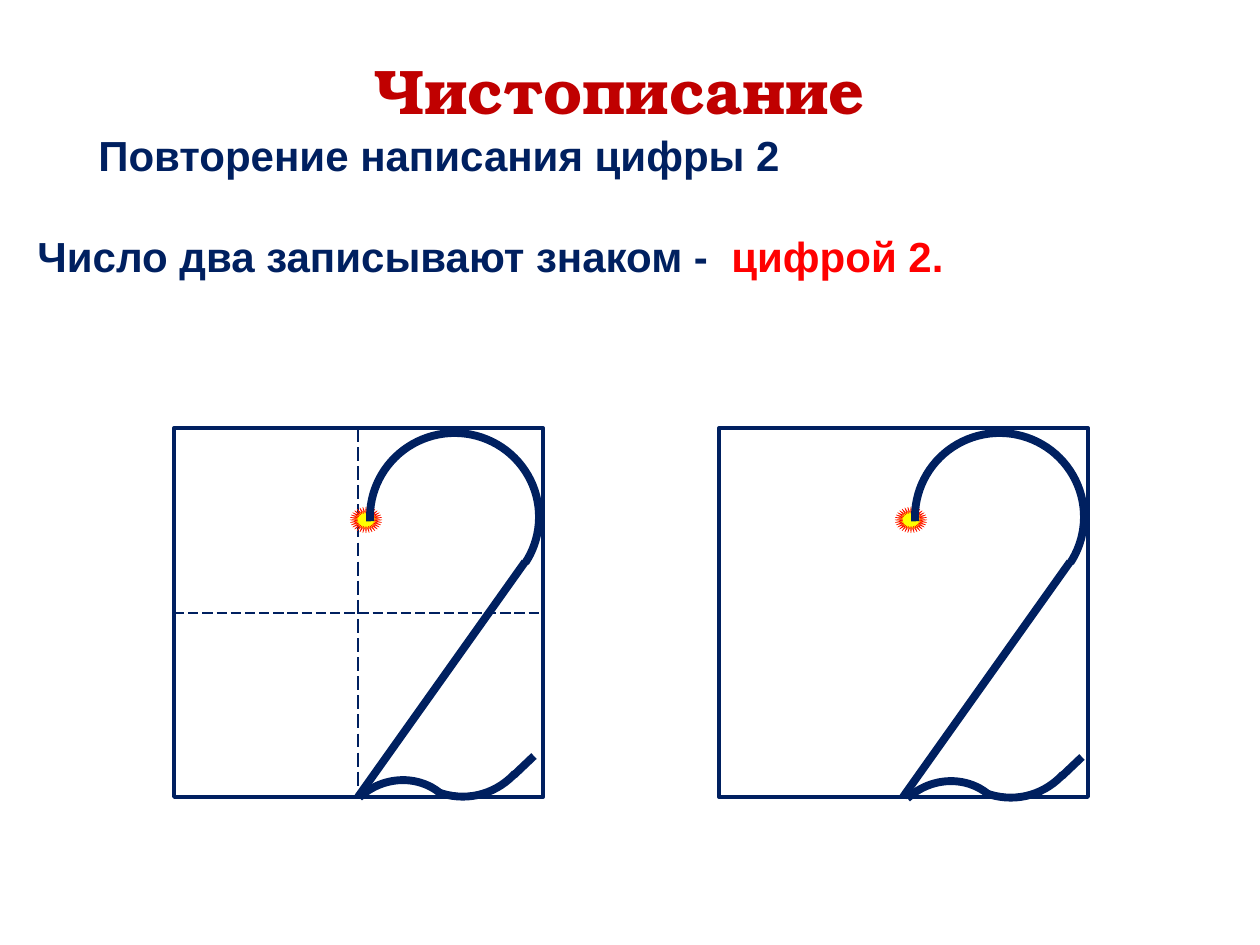
"""Builds a handwriting slide that shows how to write the digit 2."""
from lxml import etree
from pptx import Presentation
from pptx.dml.color import RGBColor
from pptx.enum.dml import MSO_LINE
from pptx.enum.shapes import MSO_CONNECTOR, MSO_SHAPE
from pptx.enum.text import MSO_AUTO_SIZE, PP_ALIGN
from pptx.oxml.ns import qn
from pptx.util import Pt

SCALE = 914400 / 126
RECT, STAR, ARC = MSO_SHAPE.RECTANGLE, MSO_SHAPE.STAR_32_POINT, MSO_SHAPE.ARC
DASH, LINE = MSO_LINE.LONG_DASH, MSO_CONNECTOR.STRAIGHT
GROW, JUST = MSO_AUTO_SIZE.SHAPE_TO_FIT_TEXT, PP_ALIGN.JUSTIFY
COLORS = {"navy": "002060", "red": "FF0000", "title": "C00000", "yellow": "FFFF00"}
SIDE = 369
PEN = 4.5


def emu(*sizes):
    return [round(size * SCALE) for size in sizes]


def tint(name):
    return RGBColor.from_string(COLORS[name])


class Page:
    """Holds the style and the current slide."""

    def __init__(self, deck):
        self.slide = deck.slides.add_slide(deck.slide_layouts[6])
        self.shapes = self.slide.shapes

    def text(self, box, words, hues, size=24, font="Arial", wrap=True, indent=0, tab=0):
        frame = self.shapes.add_textbox(*emu(*box)).text_frame
        frame.word_wrap = wrap
        frame.auto_size = GROW
        para = frame.paragraphs[0]
        props = para._p.get_or_add_pPr()
        if indent:
            props.set("indent", str(emu(indent)[0]))
            para.alignment = JUST
        if tab:
            stops = etree.SubElement(props, qn("a:tabLst"))
            etree.SubElement(stops, qn("a:tab"), pos=str(emu(tab)[0]), algn="l")
        for part, hue in zip(words, hues):
            run = para.add_run()
            run.text = part
            run.font.size, run.font.name, run.font.bold = Pt(size), font, True
            run.font.color.rgb = tint(hue)

    def line(self, start, end, width=PEN, dash=None):
        line = self.shapes.add_connector(LINE, *emu(*start, *end))
        line.line.color.rgb = tint("navy")
        line.line.width = Pt(width)
        if dash:
            line.line.dash_style = dash
        etree.SubElement(line._element.spPr, qn("a:effectLst"))

    def shape(self, kind, box, width, hue="navy", fill=None, turn=0, bends=()):
        shape = self.shapes.add_shape(kind, *emu(*box))
        shape.shadow.inherit = False
        shape.rotation = turn
        for spot, bend in enumerate(bends):
            shape.adjustments[spot] = bend
        if fill:
            shape.fill.solid()
            shape.fill.fore_color.rgb = tint(fill)
        else:
            shape.fill.background()
        shape.line.color.rgb = tint(hue)
        shape.line.width = Pt(width)

    def arc(self, box, turn, bends):
        self.shape(ARC, box, PEN, turn=turn, bends=bends)

    def grid(self, x, y):
        half = SIDE // 2
        self.line((x + half, y), (x + half, y + SIDE), 1, DASH)
        self.line((x, y + half + 1), (x + SIDE, y + half + 1), 0.75, DASH)

    def digit(self, x, y, right=0, down=0):
        self.shape(RECT, (x, y, SIDE, SIDE), 2.25)
        self.shape(STAR, (x + 176, y + 79, 32, 26), 0.25, "red", "yellow", bends=[0.26])
        self.arc((x + 196, y + 5, 169, 168), 356.5, (108.36, 21.79))
        self.line((x + 351, y + 134), (x + 184, y + SIDE))
        x, y = x + right, y + down
        self.arc((x + 207, y + 194, 156, 175), 167.7, (144.66, 178))
        self.arc((x + 165, y + 353, 122, 115), 330.4, (152.94, 204.53))
        self.line((x + 340, y + 347), (x + 360, y + 328))


def main():
    deck = Presentation()
    deck.slide_width, deck.slide_height = emu(1260, 945)
    page = Page(deck)
    page.text((25, 224, 1111, 63), ["Число два записывают знаком -\t", "цифрой 2."],
              ["navy", "red"], tab=694)
    page.grid(174, 428)
    page.digit(174, 428)
    page.digit(719, 428, 3, 1)
    page.text((28, 123, 1213, 63), ["Повторение написания цифры 2"], ["navy"], indent=58)
    page.text((362, 45, 525, 89), ["Чистописание"], ["title"], 36, "TeX Gyre Bonum", False)
    deck.save("out.pptx")


if __name__ == "__main__":
    main()
